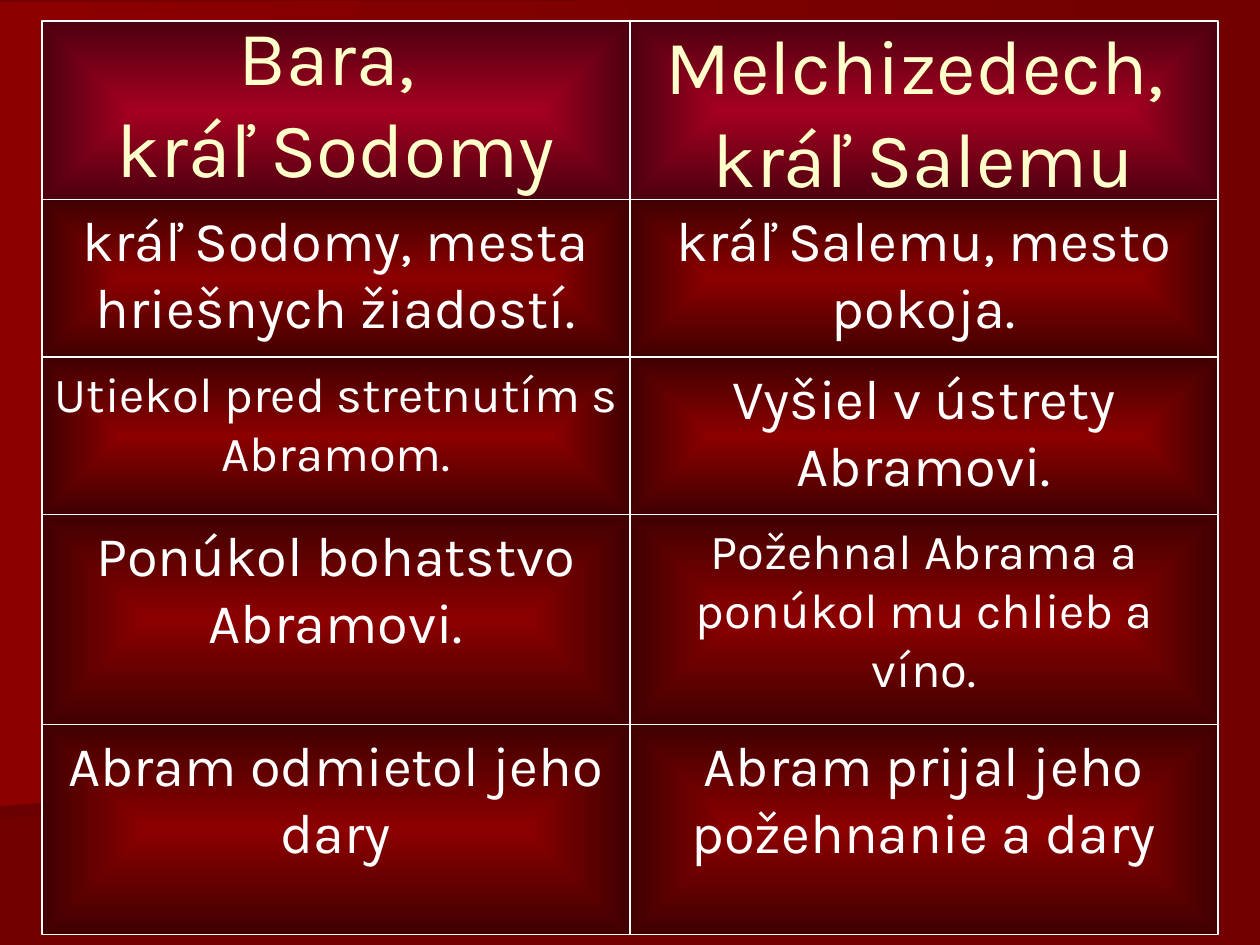
"""Build a slide that compares two kings in a grid of framed boxes."""
from lxml import etree
from pptx import Presentation
from pptx.dml.color import RGBColor
from pptx.enum.shapes import MSO_SHAPE
from pptx.enum.text import MSO_ANCHOR, MSO_AUTO_SIZE, PP_ALIGN
from pptx.oxml.ns import qn
from pptx.util import Pt

RECT = MSO_SHAPE.RECTANGLE
TOP, MID, LOW = MSO_ANCHOR.TOP, MSO_ANCHOR.MIDDLE, MSO_ANCHOR.BOTTOM
CENTER = PP_ALIGN.CENTER
NO_FIT = MSO_AUTO_SIZE.NONE
SCALE = 7620
WIDE, HIGH = 1200, 900
LEFT, HEAD_TOP, COL = 40, 20, 560
HEAD_HIGH = 170
HEADS = [("Bara, \vkráľ Sodomy", LOW), ("Melchizedech, \vkráľ Salemu", MID)]
ROWS = [
    (150, ("kráľ Sodomy, mesta hriešnych žiadostí.", 32),
     ("kráľ Salemu, mesto pokoja.", 32)),
    (150, ("Utiekol pred stretnutím s Abramom.", 28),
     ("Vyšiel v ústrety Abramovi.", 32)),
    (200, ("Ponúkol bohatstvo Abramovi.", 32),
     ("Požehnal Abrama a ponúkol mu chlieb a víno.", 28)),
    (200, ("Abram odmietol jeho dary", 32),
     ("Abram prijal jeho požehnanie a dary", 32)),
]
FOLDS = [
    ([(1074, 668), (0, 780), (0, 560), (1074, 300)], ("6A0000", "720000")),
    ([(1106, 668), (0, 768), (0, 2), (1110, 0)], ("8C0000", "720000")),
]


def px(num):
    return num * SCALE


def tint(code):
    return RGBColor.from_string(code)


def put(item, form):
    for name, value in form.items():
        setattr(item, name, value)


class Board:
    """Hold the style and the current slide."""

    font = "Karla"
    edge = "FFFFFF"
    head = {"ink": "FFFFCC", "tones": ("A50021", "4C000F")}
    body = {"ink": "FFFFFF", "tones": ("8C0000", "400000")}

    def __init__(self, deck):
        self.slide = deck.slides.add_slide(deck.slide_layouts[5])
        self.shapes = self.slide.shapes

    def back(self, code):
        fill = self.slide.background.fill
        fill.solid()
        fill.fore_color.rgb = tint(code)

    def blend(self, shape, tones):
        shape.shadow.inherit = False
        shape.fill.gradient()
        shape.fill.gradient_angle = 0
        for stop, code, place in zip(shape.fill.gradient_stops, tones, (0, 1)):
            stop.color.rgb = tint(code)
            stop.position = place

    def glow(self, shape, tones):
        self.blend(shape, tones)
        grad = shape.element.spPr.find(qn("a:gradFill"))
        grad.remove(grad.find(qn("a:lin")))
        way = etree.SubElement(grad, qn("a:path"), path="shape")
        mid = dict.fromkeys("ltrb", "50000")
        etree.SubElement(way, qn("a:fillToRect"), mid)

    def fold(self, points, tones):
        pen = self.shapes.build_freeform(*points[0], scale=SCALE)
        pen.add_line_segments(points[1:], close=True)
        shape = pen.convert_to_shape()
        self.blend(shape, tones)
        shape.line.fill.background()

    def dress(self, shape, text, size, look, anchor):
        self.glow(shape, look["tones"])
        shape.line.color.rgb = tint(self.edge)
        shape.line.width = Pt(0.75)
        frame = shape.text_frame
        put(frame, {"word_wrap": True, "auto_size": NO_FIT,
                    "vertical_anchor": anchor})
        para = frame.paragraphs[0]
        put(para, {"text": text, "alignment": CENTER})
        for run in para.runs:
            put(run.font, {"name": self.font, "size": Pt(size)})
            run.font.color.rgb = tint(look["ink"])
        return para

    def title(self, box, text, anchor):
        shape = self.shapes.title
        put(shape, dict(zip(("left", "top", "width", "height"), map(px, box))))
        shape.element.getparent().append(shape.element)
        self.dress(shape, text, 44, self.head, anchor)

    def label(self, box, text, anchor):
        shape = self.shapes.add_shape(RECT, *map(px, box))
        self.dress(shape, text, 44, self.head, anchor)

    def cell(self, box, text, size):
        shape = self.shapes.add_shape(RECT, *map(px, box))
        para = self.dress(shape, text, size, self.body, TOP)
        gap = etree.SubElement(para._p.get_or_add_pPr(), qn("a:spcBef"))
        etree.SubElement(gap, qn("a:spcPct"), val="20000")


def main():
    deck = Presentation()
    put(deck, {"slide_width": px(WIDE), "slide_height": px(HIGH)})
    board = Board(deck)
    board.back("720000")
    for points, tones in FOLDS:
        board.fold(points, tones)
    for col, (make, head) in enumerate(zip((board.title, board.label), HEADS)):
        make((LEFT + col * COL, HEAD_TOP, COL, HEAD_HIGH), *head)
    top = HEAD_TOP + HEAD_HIGH
    for high, *cells in ROWS:
        for col, (text, size) in enumerate(cells):
            board.cell((LEFT + col * COL, top, COL, high), text, size)
        top += high
    deck.save("out.pptx")


if __name__ == "__main__":
    main()
